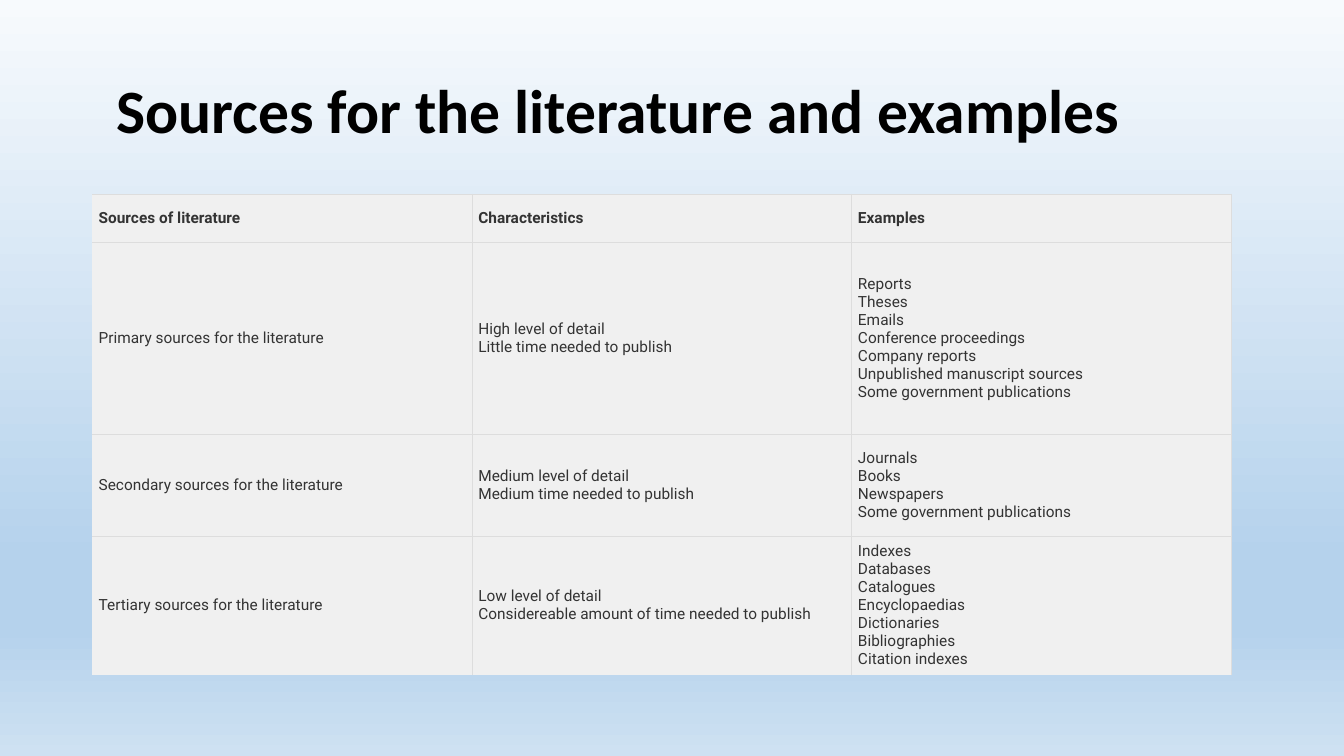
from lxml import etree
from pptx import Presentation
from pptx.dml.color import RGBColor
from pptx.enum.text import MSO_ANCHOR, PP_ALIGN
from pptx.oxml.ns import qn
from pptx.util import Pt

MIDDLE = MSO_ANCHOR.MIDDLE
LEFT = PP_ALIGN.LEFT
TITLE_ONLY = 5

BACKGROUND = [(0, "F7FAFD"), (74, "B5D2EC"), (83, "B5D2EC"), (100, "CEE1F2")]
ROW_HEIGHTS = [34.3, 137.1, 72.9, 99]
ROWS = [
    (["Sources of literature"], ["Characteristics"], ["Examples"]),
    (
        ["Primary sources for the literature"],
        ["High level of detail", "Little time needed to publish"],
        ["Reports", "Theses", "Emails", "Conference proceedings", "Company reports",
         "Unpublished manuscript sources", "Some government publications"],
    ),
    (
        ["Secondary sources for the literature"],
        ["Medium level of detail", "Medium time needed to publish"],
        ["Journals", "Books", "Newspapers", "Some government publications"],
    ),
    (
        ["Tertiary sources for the literature"],
        ["Low level of detail", "Considereable amount of time needed to publish"],
        ["Indexes", "Databases", "Catalogues", "Encyclopaedias", "Dictionaries",
         "Bibliographies", "Citation indexes"],
    ),
]


def rgb(color):
    return RGBColor.from_string(color)


def add_color(parent, color):
    etree.SubElement(parent, qn("a:srgbClr"), val=color)


class SlideBuilder:
    title_font = {"name": "Calibri", "size": Pt(44), "bold": True}
    cell_font = {"name": "Roboto", "size": Pt(11)}
    cell_margin = Pt(4.5)
    cell_fill = "F0F0F0"
    border = "DDDDDD"

    def __init__(self, s):
        self.s = s

    def background(self, stops):
        fill = self.s.background.fill
        fill.gradient()
        fill.gradient_angle = 270
        gs_list = self.s.element.find(".//" + qn("a:gsLst"))
        for gs in list(gs_list):
            gs_list.remove(gs)
        for position, color in stops:
            gs = etree.SubElement(gs_list, qn("a:gs"), pos=str(position * 1000))
            add_color(gs, color)

    def add_lines(self, tf, lines, font, color):
        for i, line in enumerate(lines):
            p = tf.paragraphs[0] if i == 0 else tf.add_paragraph()
            p.alignment = LEFT
            r = p.add_run()
            r.text = line
            for name, value in font.items():
                setattr(r.font, name, value)
            r.font.color.rgb = rgb(color)

    def title(self, text, left, top, width, height):
        sp = self.s.shapes.title
        sp.left, sp.top, sp.width, sp.height = map(Pt, (left, top, width, height))
        tf = sp.text_frame
        tf.word_wrap = True
        tf.vertical_anchor = MIDDLE
        self.add_lines(tf, [text], self.title_font, "000000")
        tf.paragraphs[0].line_spacing = 0.9

    def borders(self, cell, visible):
        """Draw the sides named in visible and clear the others."""
        tc_pr = cell._tc.get_or_add_tcPr()
        for side in "LRTB":
            ln = etree.SubElement(tc_pr, qn("a:ln" + side), w=str(Pt(0.75)))
            if side in visible:
                add_color(etree.SubElement(ln, qn("a:solidFill")), self.border)
            else:
                etree.SubElement(ln, qn("a:noFill"))

    def cell(self, cell, lines, bold, visible):
        self.borders(cell, visible)
        cell.fill.solid()
        cell.fill.fore_color.rgb = rgb(self.cell_fill)
        for side in ("left", "right", "top", "bottom"):
            setattr(cell, "margin_" + side, self.cell_margin)
        cell.vertical_anchor = MIDDLE
        self.add_lines(cell.text_frame, lines, {**self.cell_font, "bold": bold}, "333333")

    def table(self, rows, heights, left, top, width):
        columns = len(rows[0])
        frame = self.s.shapes.add_table(
            len(rows), columns, Pt(left), Pt(top), Pt(width), Pt(sum(heights)))
        table = frame.table
        table.first_row = table.horz_banding = False
        for column in table.columns:
            column.width = Pt(width / columns)
        for i, (row, height) in enumerate(zip(rows, heights)):
            table.rows[i].height = Pt(height)
            for j, lines in enumerate(row):
                visible = "TR" + ("L" if j else "") + ("B" if i < len(rows) - 1 else "")
                self.cell(table.cell(i, j), lines, i == 0, visible)


def main():
    prs = Presentation()
    prs.slide_width, prs.slide_height = Pt(960), Pt(540)
    slide = SlideBuilder(prs.slides.add_slide(prs.slide_layouts[TITLE_ONLY]))
    slide.background(BACKGROUND)
    slide.title(" Sources for the literature and examples", 66, 28.75, 828, 104.4)
    slide.table(ROWS, ROW_HEIGHTS, 66, 138.8, 813.6)
    prs.save("out.pptx")


if __name__ == "__main__":
    main()
